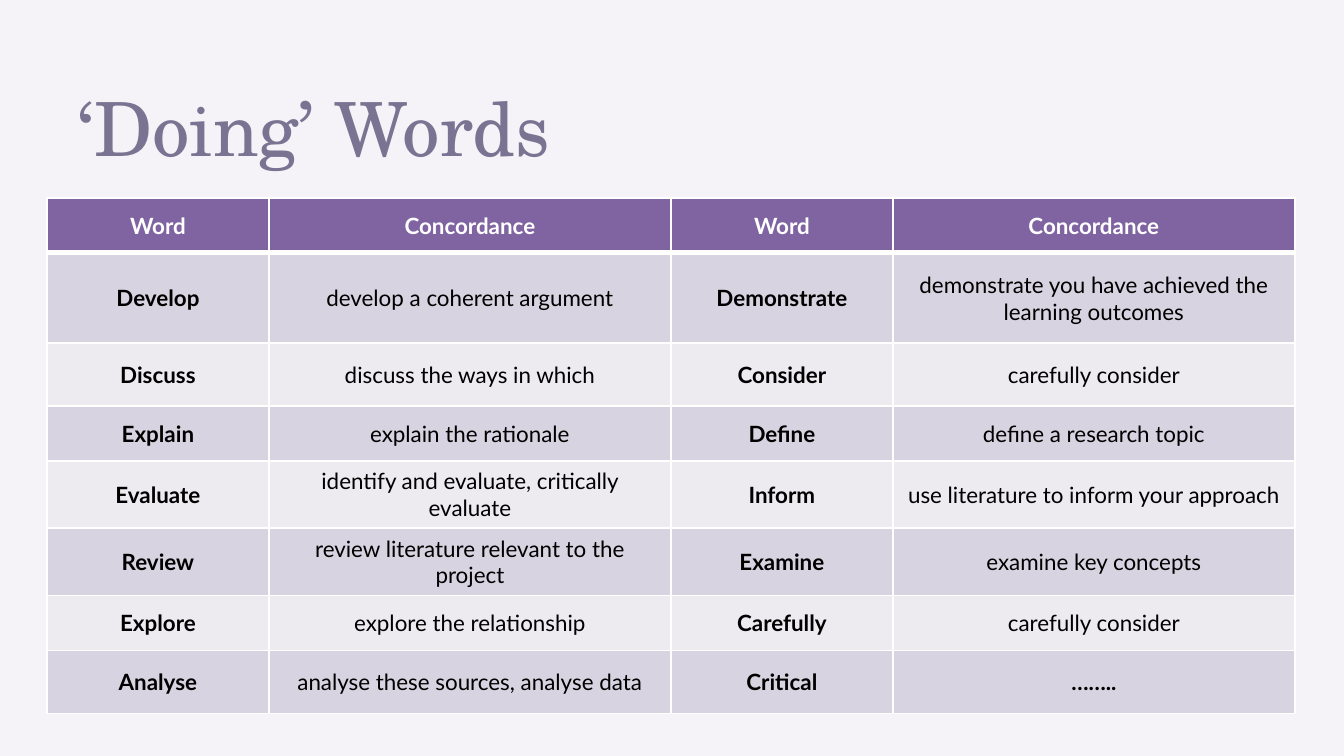
from lxml import etree
from pptx import Presentation
from pptx import util as u
from pptx.dml.color import RGBColor
from pptx.enum import text
from pptx.oxml.ns import qn

PX = u.Inches(10) / 1344
COLORS = {
    "background": "F5F3F7", "title": "7A7392", "header": "8064A2",
    "odd": "D8D3E0", "even": "EDEAF0", "white": "FFFFFF", "black": "000000",
}
COLUMNS = [222, 402] * 2
ROWS = [55, 90, 63, 55, 63, 63, 55, 63]
WORDS = [
    ["Word", "Concordance", "Word", "Concordance"],
    ["Develop", "develop a coherent argument", "Demonstrate",
     "demonstrate you have achieved the learning outcomes"],
    ["Discuss", "discuss the ways in which", "Consider", "carefully consider"],
    ["Explain", "explain the rationale", "Define", "define a research topic"],
    ["Evaluate", "identify and evaluate, critically evaluate", "Inform",
     "use literature to inform your approach"],
    ["Review", "review literature relevant to the project", "Examine",
     "examine key concepts"],
    ["Explore", "explore the relationship", "Carefully", "carefully consider"],
    ["Analyse", "analyse these sources, analyse data", "Critical", "…….."],
]


def px(n):
    return u.Emu(round(n * PX))


def rgb(name):
    return RGBColor.from_string(COLORS[name])


def format_runs(p, font, size, color, bold=False):
    for r in p.runs:
        r.font.name = font
        r.font.size = u.Pt(size)
        r.font.bold = bold
        r.font.color.rgb = rgb(color)


def add_title(s, title):
    sp = s.shapes.title
    sp.left, sp.top, sp.width, sp.height = px(79), px(93), px(1034), px(71)
    tf = sp.text_frame
    tf.text = title
    tf.word_wrap = True
    tf.auto_size = text.MSO_AUTO_SIZE.NONE
    tf.vertical_anchor = text.MSO_ANCHOR.TOP
    tf.margin_left = tf.margin_top = tf.margin_right = tf.margin_bottom = 0
    p = tf.paragraphs[0]
    p.alignment = text.PP_ALIGN.LEFT
    p.line_spacing = u.Pt(42)
    format_runs(p, "TeX Gyre Schola", 40, "title")


def set_borders(cell, **widths):
    """Draw white borders; widths are points keyed by side L, R, T, B."""
    tcPr = cell._tc.get_or_add_tcPr()
    for i, (side, width) in enumerate(widths.items()):
        ln = etree.Element(qn(f"a:ln{side}"), w=str(u.Pt(width)))
        fill = etree.SubElement(ln, qn("a:solidFill"))
        etree.SubElement(fill, qn("a:srgbClr"), val=COLORS["white"])
        tcPr.insert(i, ln)


def format_cell(cell, content, fill, color, bold):
    cell.fill.solid()
    cell.fill.fore_color.rgb = rgb(fill)
    cell.vertical_anchor = text.MSO_ANCHOR.MIDDLE
    cell.text = content
    p = cell.text_frame.paragraphs[0]
    p.alignment = text.PP_ALIGN.CENTER
    format_runs(p, "Lato", 12, color, bold)


def add_word_table(s, words):
    table = s.shapes.add_table(len(ROWS), len(COLUMNS), px(47), px(198),
                               px(sum(COLUMNS)), px(sum(ROWS))).table
    for column, width in zip(table.columns, COLUMNS):
        column.width = px(width)
    for i, (row, height) in enumerate(zip(table.rows, ROWS)):
        row.height = px(height)
        header = i == 0
        fill = "header" if header else "odd" if i % 2 else "even"
        for j, cell in enumerate(row.cells):
            bold = header or j % 2 == 0 or words[i][j] == "…….."
            format_cell(cell, words[i][j], fill,
                        "white" if header else "black", bold)
            set_borders(cell, L=1, R=1, T=3 if i == 1 else 1,
                        B=3 if header else 1)


def main():
    prs = Presentation()
    prs.slide_width, prs.slide_height = px(1344), px(756)
    s = prs.slides.add_slide(prs.slide_layouts[5])
    s.background.fill.solid()
    s.background.fill.fore_color.rgb = rgb("background")
    add_title(s, "‘Doing’ Words")
    add_word_table(s, WORDS)
    prs.save("out.pptx")


if __name__ == "__main__":
    main()
